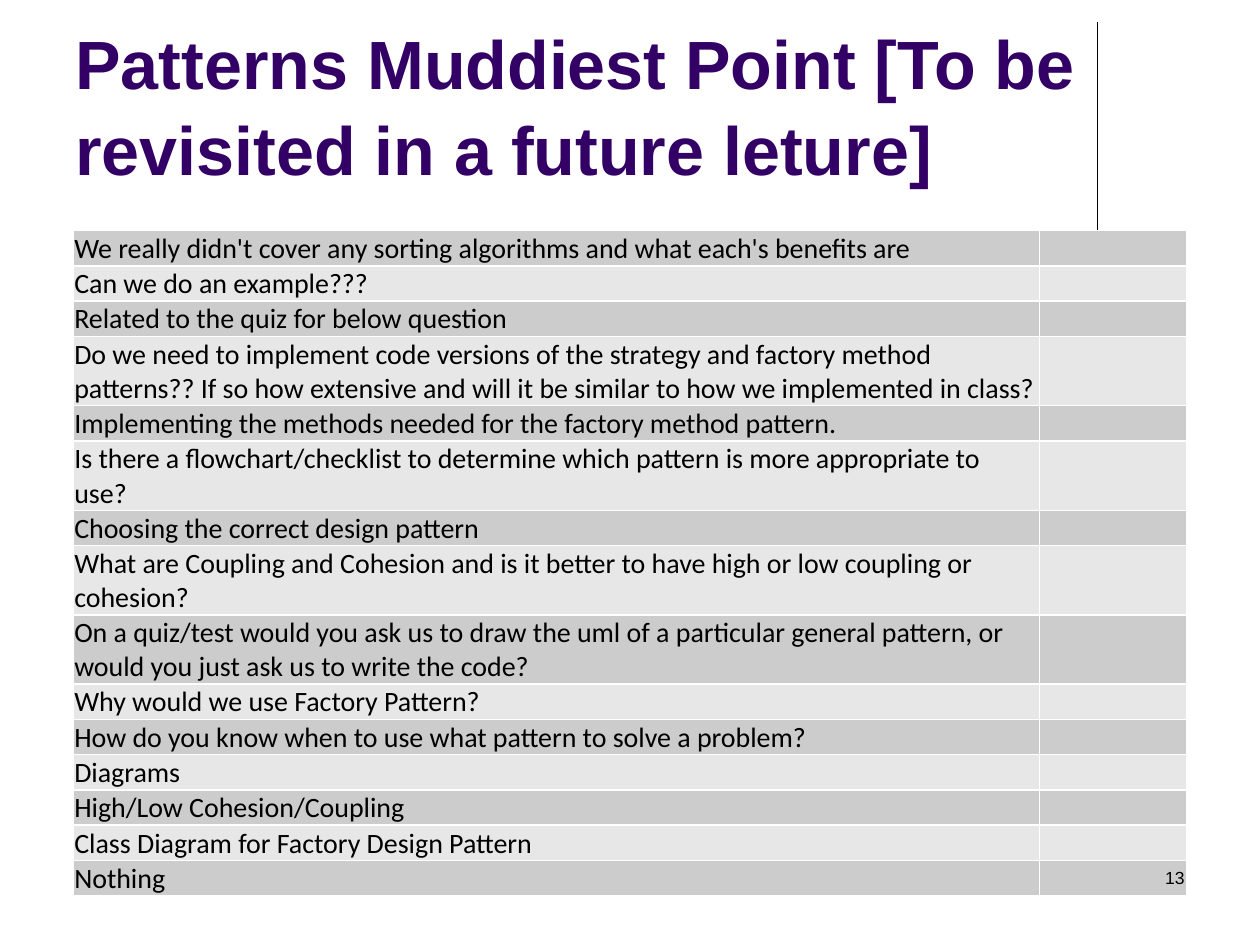
import pptx
import pptx.util
import pptx.dml.color
import pptx.enum.text
import pptx.enum.shapes
import lxml.etree

THEME = {
    "title": "330066", "ink": "000000",
    "bands": ("CCCCCC", "E7E7E7"),
    "head": "Arial", "body": "Calibri",
    "big": 39, "mid": 16, "small": 10,
}
ALIGN = pptx.enum.text.PP_ALIGN
BASE = pptx.enum.text.MSO_ANCHOR
RGB = pptx.dml.color.RGBColor.from_string
Inch = pptx.util.Inches

deck = pptx.Presentation()
deck.slide_width, deck.slide_height = Inch(10), Inch(7.5)
WIDE, HIGH = deck.slide_width, deck.slide_height
slide = deck.slides.add_slide(deck.slide_layouts[6])


def write(frame, text, font, size, color, bold=False, align=ALIGN.LEFT, space=1.0):
    """Put one formatted paragraph in a text frame."""
    frame.word_wrap = True
    para = frame.paragraphs[0]
    para.alignment, para.line_spacing = align, space
    run = para.add_run()
    run.text = text
    run.font.name, run.font.size, run.font.bold = font, pptx.util.Pt(size), bold
    run.font.color.rgb = RGB(color)


def area(left, top, wide, high):
    """Turn shares of the slide into lengths."""
    return int(left * WIDE), int(top * HIGH), int(wide * WIDE), int(high * HIGH)


# Upright rule beside the title
x, top, _, drop = area(0.871, 0.023, 0, 0.221)
rule = slide.shapes.add_connector(
    pptx.enum.shapes.MSO_CONNECTOR.STRAIGHT, x, top, x, top + drop)
rule.line.color.rgb = RGB(THEME["ink"])
rule.line.width = pptx.util.Pt(0.75)
A = "{http://schemas.openxmlformats.org/drawingml/2006/main}"
lxml.etree.SubElement(rule._element.spPr, A + "effectLst")

# Title
title = slide.shapes.add_textbox(*area(0.05, 0.017, 0.825, 0.19)).text_frame
title.vertical_anchor = BASE.BOTTOM
write(title, "Patterns Muddiest Point [To be revisited in a future leture]",
      THEME["head"], THEME["big"], THEME["title"], bold=True, space=1.05)

# Questions, each with the number of lines it fills
asks = [
    ("We really didn't cover any sorting algorithms and what each's benefits are", 1),
    ("Can we do an example???", 1),
    ("Related to the quiz for below question", 1),
    ("Do we need to implement code versions of the strategy and factory method "
     "patterns?? If so how extensive and will it be similar to how we "
     "implemented in class?", 2),
    ("Implementing the methods needed for the factory method pattern.", 1),
    ("Is there a flowchart/checklist to determine which pattern is more "
     "appropriate to use?", 2),
    ("Choosing the correct design pattern", 1),
    ("What are Coupling and Cohesion and is it better to have high or low "
     "coupling or cohesion?", 2),
    ("On a quiz/test would you ask us to draw the uml of a particular general "
     "pattern, or would you just ask us to write the code?", 2),
    ("Why would we use Factory Pattern?", 1),
    ("How do you know when to use what pattern to solve a problem?", 1),
    ("Diagrams", 1),
    ("High/Low Cohesion/Coupling", 1),
    ("Class Diagram for Factory Design Pattern", 1),
    ("Nothing", 1),
]

# Banded table: the second column stays empty
grid = slide.shapes.add_table(len(asks), 2, *area(0.058, 0.244, 0.884, 0.705)).table
grid.first_row = grid.horz_banding = False
for col, share in zip(grid.columns, (0.767, 0.117)):
    col.width = int(share * WIDE)
for num, (ask, lines) in enumerate(asks):
    grid.rows[num].height = Inch(0.28 if lines == 1 else 0.55)
    for cell in grid.rows[num].cells:
        cell.fill.solid()
        cell.fill.fore_color.rgb = RGB(THEME["bands"][num % 2])
        cell.vertical_anchor = BASE.BOTTOM
        cell.margin_left = cell.margin_right = cell.margin_top = Inch(0.01)
        cell.margin_bottom = 0
    first, blank = grid.cell(num, 0), grid.cell(num, 1)
    write(first.text_frame, ask, THEME["body"], THEME["mid"], THEME["ink"])
    # A small end mark keeps the empty cell from stretching its row
    lxml.etree.SubElement(blank.text_frame.paragraphs[0]._p, A + "endParaRPr",
                          sz=str(THEME["small"] * 100))

# Page number
page = slide.shapes.add_textbox(*area(0.717, 0.911, 0.233, 0.067)).text_frame
write(page, "13", THEME["head"], THEME["small"], THEME["ink"], align=ALIGN.RIGHT)

deck.save("out.pptx")
